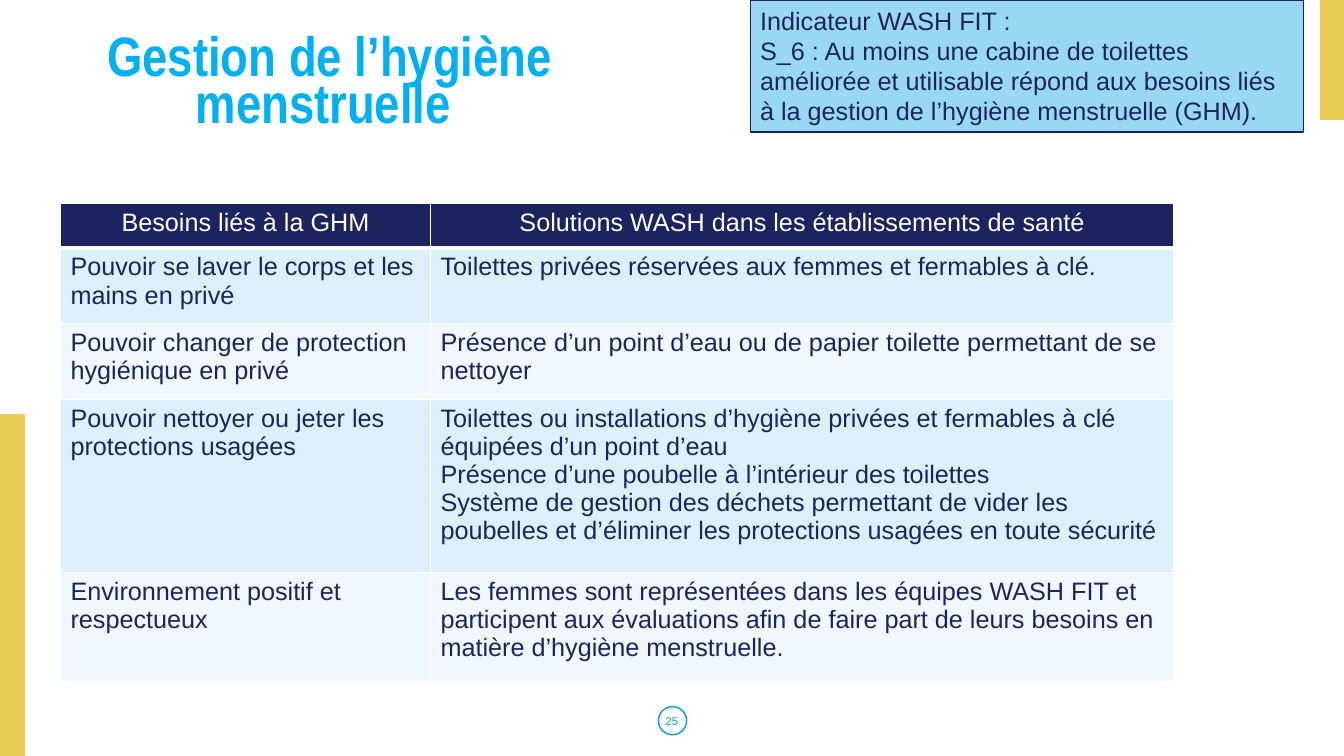
from lxml import etree
from pptx import Presentation
from pptx.dml.color import RGBColor
from pptx.enum.shapes import MSO_SHAPE
from pptx.enum.text import MSO_ANCHOR, MSO_AUTO_SIZE, PP_ALIGN
from pptx.oxml.ns import qn
from pptx.util import Inches, Pt

RECTANGLE, OVAL = MSO_SHAPE.RECTANGLE, MSO_SHAPE.OVAL
TOP, MIDDLE = MSO_ANCHOR.TOP, MSO_ANCHOR.MIDDLE
LEFT, CENTER = PP_ALIGN.LEFT, PP_ALIGN.CENTER
NO_AUTOFIT = MSO_AUTO_SIZE.NONE
TITLE_ONLY_LAYOUT = 5

NAVY, WHITE, GOLD, BLUE = "1C245F", "FFFFFF", "EACD54", "009EE3"
TITLE_BLUE, INDICATOR_BLUE = "00B0F0", "99D8F3"
ROW_FILLS = ("DDF0FA", "EFF8FD")

COLUMN_WIDTHS = (3.67, 7.37)
ROW_HEIGHTS = (0.44, 0.75, 0.75, 1.72, 1.08)
NEEDS = [
    ("Besoins liés à la GHM", "Solutions WASH dans les établissements de santé"),
    ("Pouvoir se laver le corps et les mains en privé",
     "Toilettes privées réservées aux femmes et fermables à clé."),
    ("Pouvoir changer de protection hygiénique en privé",
     "Présence d’un point d’eau ou de papier toilette permettant de se nettoyer"),
    ("Pouvoir nettoyer ou jeter les protections usagées",
     "Toilettes ou installations d’hygiène privées et fermables à clé équipées d’un point d’eau\n"
     "Présence d’une poubelle à l’intérieur des toilettes\n"
     "Système de gestion des déchets permettant de vider les poubelles et d’éliminer "
     "les protections usagées en toute sécurité"),
    ("Environnement positif et respectueux",
     "Les femmes sont représentées dans les équipes WASH FIT et participent aux évaluations "
     "afin de faire part de leurs besoins en matière d’hygiène menstruelle."),
]
INDICATOR = (
    "Indicateur WASH FIT :\n"
    "S_6 : Au moins une cabine de toilettes améliorée et utilisable répond aux besoins "
    "liés à la gestion de l’hygiène menstruelle (GHM)."
)


def rgb(value):
    """Turn a hex string into a colour."""
    return RGBColor.from_string(value)


def write(frame, text, size, color, align=LEFT, font="Arial", bold=False, spacing=None):
    """Fill a text frame, one paragraph per line of text."""
    frame.text = text
    frame.word_wrap = True
    for paragraph in frame.paragraphs:
        paragraph.alignment = align
        paragraph.line_spacing = spacing
        paragraph.font.size = Pt(size)
        paragraph.font.name = font
        paragraph.font.bold = bold
        paragraph.font.color.rgb = rgb(color)


def add_panel(slide, kind, box, line, fill=None, width=1):
    """Add an outlined shape, filled or hollow."""
    panel = slide.shapes.add_shape(kind, *map(Inches, box))
    panel.shadow.inherit = False
    if fill:
        panel.fill.solid()
        panel.fill.fore_color.rgb = rgb(fill)
    else:
        panel.fill.background()
    panel.line.color.rgb = rgb(line)
    panel.line.width = Pt(width)
    return panel


def set_borders(cell, bottom_width):
    """Draw white cell borders with a chosen bottom width."""
    properties = cell._tc.get_or_add_tcPr()
    widths = {"lnL": 1, "lnR": 1, "lnT": 1, "lnB": bottom_width}
    for position, (side, width) in enumerate(widths.items()):
        border = etree.Element(qn(f"a:{side}"), w=str(Pt(width)))
        fill = etree.SubElement(border, qn("a:solidFill"))
        etree.SubElement(fill, qn("a:srgbClr"), val=WHITE)
        properties.insert(position, border)


def add_title(slide):
    """Place and format the slide title."""
    title = slide.shapes.title
    title.left, title.top, title.width, title.height = map(Inches, (0.4, 0.34, 5.74, 1.13))
    write(title.text_frame, "Gestion de l’hygiène menstruelle ", 39.6, TITLE_BLUE,
          CENTER, "Arial Narrow", True, 0.7)
    title.text_frame.vertical_anchor = TOP
    title.text_frame.auto_size = NO_AUTOFIT


def add_needs_table(slide):
    """Add the table of needs and solutions."""
    frame = slide.shapes.add_table(
        len(ROW_HEIGHTS), len(COLUMN_WIDTHS), Inches(0.6), Inches(2.02),
        Inches(sum(COLUMN_WIDTHS)), Inches(sum(ROW_HEIGHTS)))
    table = frame.table
    for column, width in zip(table.columns, COLUMN_WIDTHS):
        column.width = Inches(width)
    for index, (row, height, texts) in enumerate(zip(table.rows, ROW_HEIGHTS, NEEDS)):
        row.height = Inches(height)
        header = index == 0
        for cell, text in zip(row.cells, texts):
            write(cell.text_frame, text, 18, WHITE if header else NAVY,
                  CENTER if header else LEFT)
            cell.fill.solid()
            cell.fill.fore_color.rgb = rgb(NAVY if header else ROW_FILLS[(index - 1) % 2])
            set_borders(cell, 3 if header else 1)


def add_indicator(slide):
    """Add the indicator box at the top right."""
    box = add_panel(slide, RECTANGLE, (7.44, 0, 5.49, 1.31), NAVY, INDICATOR_BLUE, 0.75)
    write(box.text_frame, INDICATOR, 18, NAVY)
    box.text_frame.vertical_anchor = TOP


def add_page_number(slide):
    """Add the circled page number."""
    add_panel(slide, OVAL, (6.53, 7.01, 0.28, 0.28), BLUE)
    number = slide.shapes.add_textbox(*map(Inches, (0, 6.95, 13.33, 0.4)))
    write(number.text_frame, "25", 8, BLUE, CENTER)
    number.text_frame.vertical_anchor = MIDDLE


def main():
    """Build the slide and save it."""
    presentation = Presentation()
    presentation.slide_width, presentation.slide_height = Inches(13.33), Inches(7.5)
    slide = presentation.slides.add_slide(presentation.slide_layouts[TITLE_ONLY_LAYOUT])
    for bar in ((0, 4.11, 0.24, 3.39), (13.1, 0, 0.24, 1.18)):
        add_panel(slide, RECTANGLE, bar, GOLD, GOLD)
    add_page_number(slide)
    add_title(slide)
    add_needs_table(slide)
    add_indicator(slide)
    presentation.save("out.pptx")


if __name__ == "__main__":
    main()
